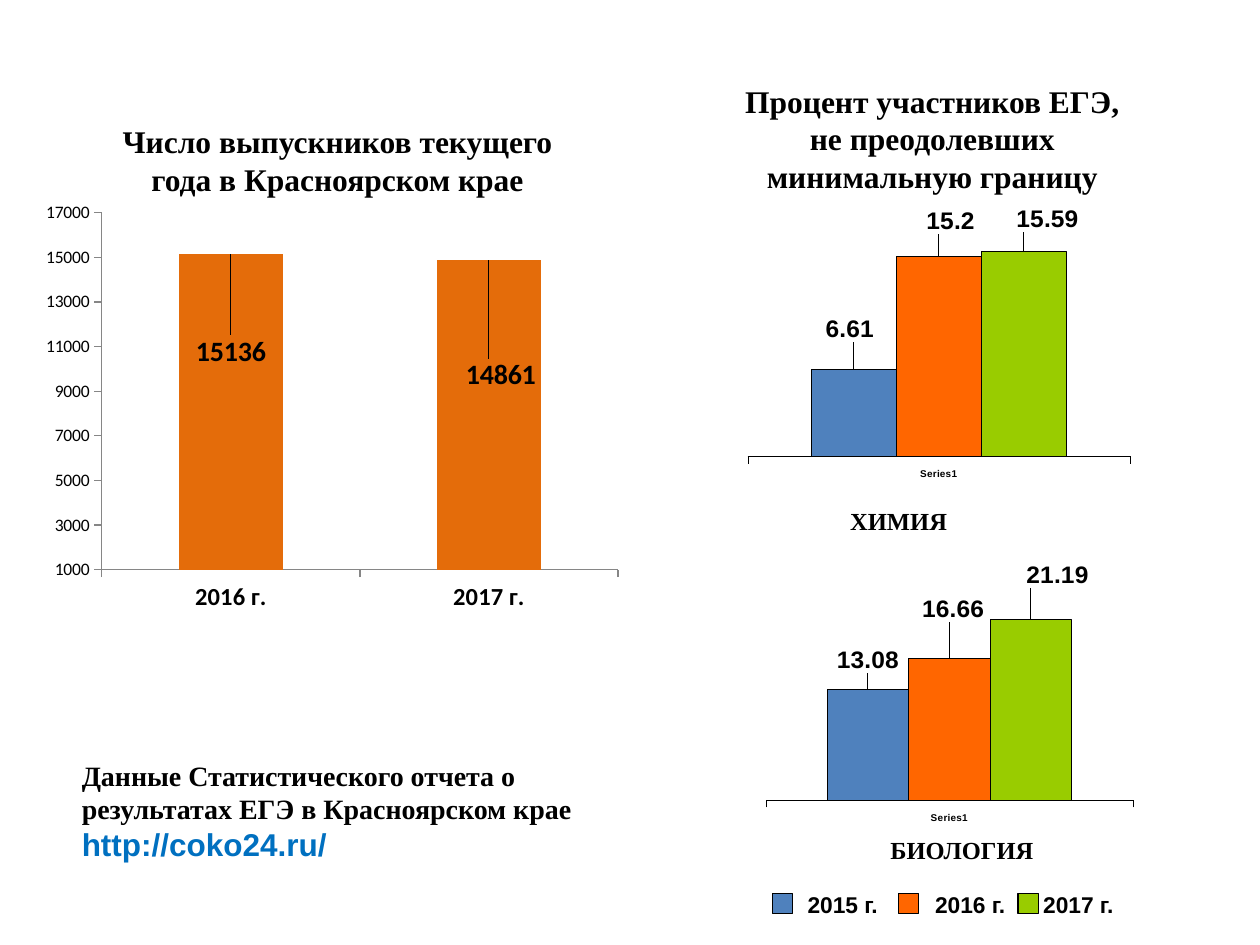
import pptx
import pptx.chart.data
import pptx.dml.color
import pptx.enum.chart
import pptx.enum.shapes
import pptx.enum.text
import pptx.oxml
import pptx.oxml.ns
import pptx.util
from dataclasses import dataclass

Cm, Pt = pptx.util.Cm, pptx.util.Pt
ChartEnum = pptx.enum.chart
NAMESPACES = pptx.oxml.ns.nsdecls("c", "a")


@dataclass(frozen=True)
class Theme:
    serif: str = "Times New Roman"
    sans: str = "Arial"
    chart_font: str = "Calibri"
    black: str = "000000"
    white: str = "FFFFFF"
    link: str = "0070C0"
    axis: str = "868686"
    graduates: str = "E46C0A"
    years: tuple = ("4F81BD", "FF6600", "99CC00")
    heading: float = 18
    source: float = 16
    subject: float = 14
    legend: float = 13
    axis_size: float = 10
    tiny: float = 5.7


THEME = Theme()
CENTER = pptx.enum.text.PP_ALIGN.CENTER


def rgb(value):
    return pptx.dml.color.RGBColor.from_string(value)


def format_font(font, name, size, color=THEME.black, bold=True):
    font.name, font.size, font.bold = name, Pt(size), bold
    font.color.rgb = rgb(color)


def write_text(para, text, name=THEME.serif, size=THEME.heading,
               color=THEME.black, align=None, tabs=()):
    """Write one formatted run, with optional tab stops in centimetres."""
    if tabs:
        stops = "".join(f'<a:tab pos="{Cm(stop)}" algn="l"/>' for stop in tabs)
        para._p.get_or_add_pPr().append(
            pptx.oxml.parse_xml(f"<a:tabLst {NAMESPACES}>{stops}</a:tabLst>"))
    para.alignment = align
    span = para.add_run()
    span.text = text
    format_font(span.font, name, size, color)


def layout_xml(x, y, w=None, h=None):
    """Plot-area layout when a size is given, otherwise a label offset."""
    target = modes = size = ""
    if w is not None:
        target = '<c:layoutTarget val="inner"/>'
        modes = '<c:xMode val="edge"/><c:yMode val="edge"/>'
        size = f'<c:w val="{w}"/><c:h val="{h}"/>'
    return pptx.oxml.parse_xml(
        f"<c:layout {NAMESPACES}><c:manualLayout>{target}{modes}"
        f'<c:x val="{x}"/><c:y val="{y}"/>{size}</c:manualLayout></c:layout>')


class SlideBuilder:
    def __init__(self, page, theme):
        self.page, self.theme = page, theme

    def text_box(self, bounds, lines):
        box = self.page.shapes.add_textbox(*map(Cm, bounds))
        frame = box.text_frame
        frame.word_wrap = True
        frame.auto_size = pptx.enum.text.MSO_AUTO_SIZE.SHAPE_TO_FIT_TEXT
        for index, (text, style) in enumerate(lines):
            para = frame.add_paragraph() if index else frame.paragraphs[0]
            write_text(para, text, **style)

    def swatch(self, left, top, side, color):
        box = self.page.shapes.add_shape(
            pptx.enum.shapes.MSO_SHAPE.RECTANGLE, *map(Cm, (left, top, side, side)))
        box.shadow.inherit = False
        box.fill.solid()
        box.fill.fore_color.rgb = rgb(color)
        box.line.color.rgb = rgb(self.theme.black)
        box.line.width = Pt(0.75)

    def column_chart(self, bounds, categories, rows, area, top_value, font, size):
        """Add the bare column chart; series get their look afterwards."""
        data = pptx.chart.data.CategoryChartData()
        data.categories = categories
        for number, values in enumerate(rows, 1):
            data.add_series(f"Series {number}", values)
        chart = self.page.shapes.add_chart(
            ChartEnum.XL_CHART_TYPE.COLUMN_CLUSTERED, *map(Cm, bounds), data).chart
        chart.has_legend = chart.has_title = False
        format_font(chart.font, font, size, bold=font == self.theme.sans)
        plot = chart.plots[0]
        plot.gap_width, plot.overlap, plot.vary_by_categories = 150, 0, False
        for axis in (chart.category_axis, chart.value_axis):
            axis.has_major_gridlines = False
            axis.major_tick_mark = ChartEnum.XL_TICK_MARK.OUTSIDE
            axis.minor_tick_mark = ChartEnum.XL_TICK_MARK.NONE
        chart.value_axis.maximum_scale = top_value
        plot_area = chart._chartSpace.chart.plotArea
        for old in plot_area.findall(pptx.oxml.ns.qn("c:layout")):
            plot_area.remove(old)
        plot_area.insert(0, layout_xml(*area))
        return chart

    def axis_line(self, axis, color, width):
        axis.format.line.color.rgb = rgb(color)
        axis.format.line.width = Pt(width)

    def style_series(self, series, color, offsets, font, size, boxed=False):
        """Colour a series and shift each value label from its column's end."""
        series.format.fill.solid()
        series.format.fill.fore_color.rgb = rgb(color)
        labels = series.data_labels
        labels.show_value = True
        format_font(labels.font, font, size)
        for index, offset in enumerate(offsets):
            label = series.points[index].data_label
            format_font(label.font, font, size)
            label.position = ChartEnum.XL_LABEL_POSITION.OUTSIDE_END
            element = labels._element.findall(pptx.oxml.ns.qn("c:dLbl"))[index]
            element.insert(1, layout_xml(*offset))
            if boxed:
                element.insert(2, pptx.oxml.parse_xml(
                    f"<c:spPr {NAMESPACES}><a:solidFill><a:srgbClr "
                    f'val="{self.theme.white}"/></a:solidFill></c:spPr>'))
        # Leader lines accompany the boxed labels only
        labels._element.append(pptx.oxml.parse_xml(
            f"<c:extLst {NAMESPACES}>"
            '<c:ext uri="{CE6537A1-D6FC-4f65-9D91-7224C49458BB}" xmlns:c15='
            '"http://schemas.microsoft.com/office/drawing/2012/chart">'
            f'<c15:showLeaderLines val="{int(boxed)}"/></c:ext></c:extLst>'))

    def graduates_chart(self, bounds):
        theme = self.theme
        chart = self.column_chart(
            bounds, ["2016 г.", "2017 г."], [(15136, 14861)],
            (0.112, 0.044, 0.868, 0.836), 17000, theme.chart_font, theme.axis_size)
        chart.value_axis.minimum_scale = 1000
        chart.value_axis.major_unit = 2000
        format_font(chart.category_axis.tick_labels.font, theme.chart_font, 14)
        for axis in (chart.category_axis, chart.value_axis):
            self.axis_line(axis, theme.axis, 0.75)
        self.style_series(chart.plots[0].series[0], theme.graduates,
                          [(0, 0.28), (0.02, 0.32)], theme.chart_font, 16, boxed=True)

    def subject_chart(self, bounds, values, area, top_value, offsets):
        theme = self.theme
        chart = self.column_chart(bounds, ["Series1"], [[value] for value in values],
                                  area, top_value, theme.sans, theme.tiny)
        chart.value_axis.minimum_scale = 0
        chart.value_axis.visible = False
        axis = chart.category_axis
        axis.tick_label_position = ChartEnum.XL_TICK_LABEL_POSITION.LOW
        format_font(axis.tick_labels.font, theme.sans, theme.tiny)
        self.axis_line(axis, theme.black, 0.08)
        for series, color, offset in zip(chart.plots[0].series, theme.years, offsets):
            self.style_series(series, color, [offset], theme.sans, theme.subject)
            series.format.line.color.rgb = rgb(theme.black)
            series.format.line.width = Pt(0.31)


def main():
    deck = pptx.Presentation()
    deck.slide_width, deck.slide_height = Cm(25.4), Cm(19.05)
    builder = SlideBuilder(deck.slides.add_slide(deck.slide_layouts[6]), THEME)
    heading = {"align": CENTER}
    subject = {"size": THEME.subject}

    # Left: number of graduates
    builder.graduates_chart((0.71, 3.91, 11.99, 8.61))
    builder.text_box((1.7, 2.34, 10.21, 1.8), [
        ("Число выпускников текущего года в Красноярском крае", heading)])

    # Right: share below the threshold, by subject
    builder.subject_chart((14.91, 4.14, 8.03, 5.61), (6.61, 15.2, 15.59),
                          (0.02, 0.03, 0.96, 0.87), 18,
                          [(-0.01, -0.08), (0.03, -0.06), (0.06, -0.05)])
    builder.text_box((14.3, 1.52, 8.99, 2.57), [
        ("Процент участников ЕГЭ,", heading),
        ("не преодолевших минимальную границу", heading)])
    builder.text_box((16.89, 10.08, 2.79, 0.86), [("ХИМИЯ", subject)])
    builder.subject_chart((15.29, 11.33, 7.7, 5.38), (13.08, 16.66, 21.19),
                          (0.02, 0.07, 0.96, 0.82), 25,
                          [(0, -0.04), (0.01, -0.12), (0.07, -0.1)])
    builder.text_box((17.7, 16.71, 3.99, 0.86), [("БИОЛОГИЯ", subject)])

    # Legend shared by both subjects
    builder.text_box((16.03, 17.83, 7.34, 0.81), [
        ("2015 г.\t2016 г.\t2017 г.",
         {"name": THEME.sans, "size": THEME.legend, "tabs": (2.57, 4.75)})])
    for left, color in zip((15.57, 18.11, 20.52), THEME.years):
        builder.swatch(left, 18.01, 0.41, color)

    # Data source
    builder.text_box((1.4, 15.16, 10.59, 2.39), [
        ("Данные Статистического отчета о результатах ЕГЭ в Красноярском крае",
         {"size": THEME.source}),
        ("http://coko24.ru/", {"name": THEME.sans, "color": THEME.link})])

    deck.save("out.pptx")


if __name__ == "__main__":
    main()
